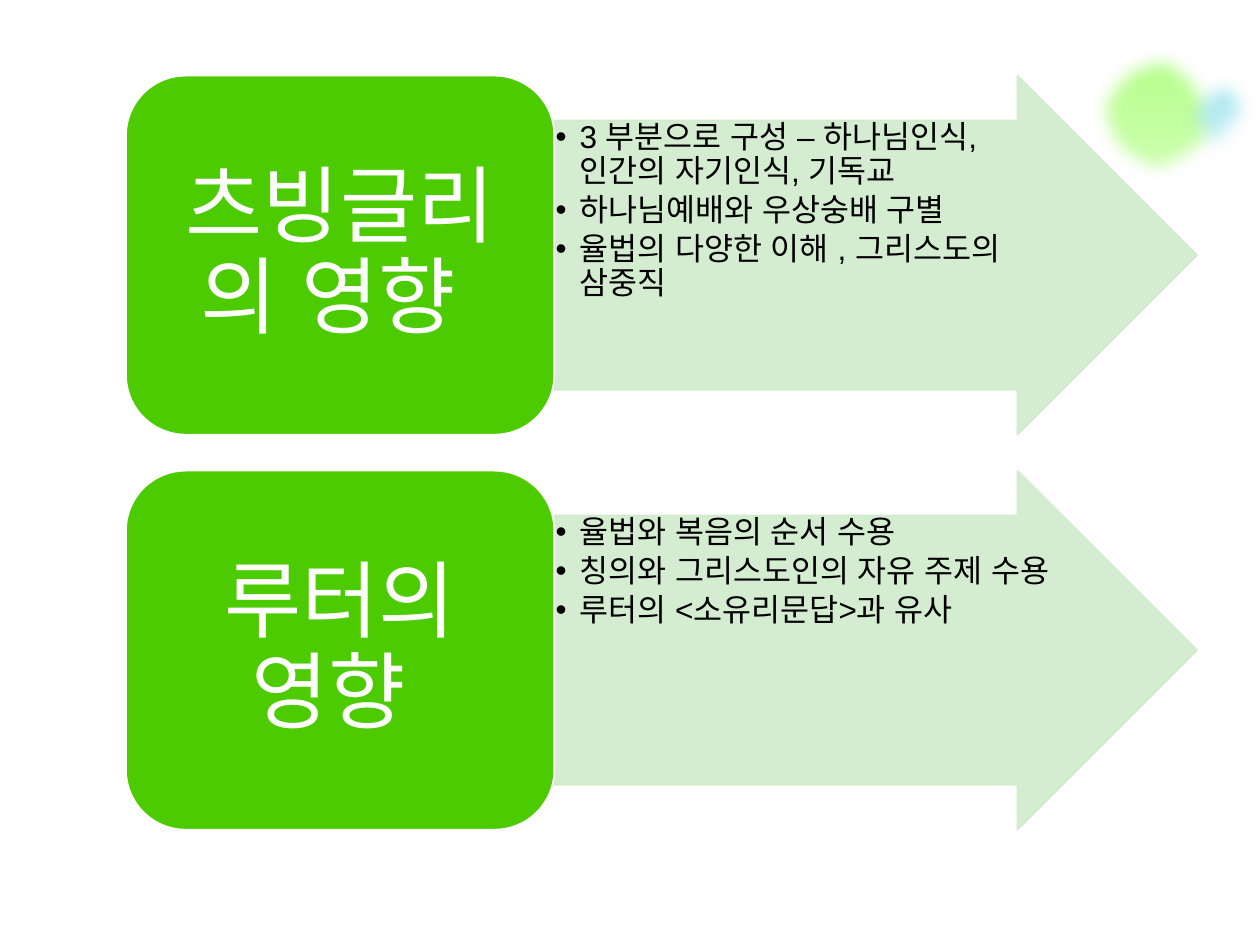
import pptx
import pptx.util
import pptx.dml.color
import pptx.enum.shapes
import pptx.enum.text
import pptx.oxml
import pptx.oxml.ns

SLIDE_WIDTH = pptx.util.Inches(10)
SLIDE_HEIGHT = pptx.util.Inches(7.5)
COLORS = {
    "label": "4CCB00",
    "arrow": "D0ECCC",
    "white": "FFFFFF",
    "black": "000000",
    "green_glow": "B2FF84",
    "blue_glow": "8CDFEC",
    "blue_fade": "B0E9F2",
}
FONT = "Arial"
LEFT, TOP = 0.1, 0.08
LABEL_WIDTH, ARROW_WIDTH, ROW_HEIGHT = 0.34, 0.51, 0.38
ROW_PITCH = ROW_HEIGHT * 1.1

INFLUENCES = [
    ("츠빙글리의 영향 ", [
        "3 부분으로 구성 – 하나님인식, 인간의 자기인식, 기독교",
        "하나님예배와 우상숭배 구별",
        "율법의 다양한 이해 , 그리스도의 삼중직",
    ]),
    ("루터의 영향 ", [
        "율법와 복음의 순서 수용",
        "칭의와 그리스도인의 자유 주제 수용",
        "루터의 <소유리문답>과 유사",
    ]),
]

GREEN_OUTLINE = [
    (9.74, 1.03),
    (9.71, 1.18), (9.74, 1.26), (9.49, 1.39),
    (9.36, 1.47), (9.21, 1.5), (9.06, 1.46),
    (8.91, 1.43), (8.78, 1.34), (8.7, 1.21),
    (8.65, 1.04), (8.59, 0.93), (8.63, 0.78),
    (8.66, 0.63), (8.75, 0.5), (8.88, 0.42),
    (9.06, 0.37), (9.18, 0.32), (9.31, 0.34),
    (9.43, 0.37), (9.55, 0.45), (9.63, 0.58),
    (9.71, 0.71), (9.78, 0.88), (9.74, 1.03),
]
BLUE_OUTLINE = [
    (9.97, 1.05),
    (10.03, 0.96), (10, 0.89), (9.99, 0.82),
    (9.98, 0.75), (9.97, 0.65), (9.91, 0.6),
    (9.85, 0.56), (9.71, 0.54), (9.62, 0.56),
    (9.54, 0.58), (9.45, 0.63), (9.39, 0.72),
    (9.32, 0.81), (9.32, 0.92), (9.34, 1.01),
    (9.35, 1.09), (9.4, 1.19), (9.46, 1.24),
    (9.53, 1.29), (9.64, 1.31), (9.71, 1.31),
    (9.78, 1.3), (9.81, 1.29), (9.87, 1.2),
    (9.87, 1.2), (9.97, 1.05), (9.97, 1.05),
]


def rgb(name):
    return pptx.dml.color.RGBColor.from_string(COLORS[name])


def add_child(parent, tag, **attributes):
    child = pptx.oxml.parse_xml(f"<a:{tag} {pptx.oxml.ns.nsdecls('a')}/>")
    for key, value in attributes.items():
        child.set(key, str(value))
    parent.append(child)
    return child


def set_opacity(element, percent):
    for color in element.iter(pptx.oxml.ns.qn("a:srgbClr")):
        add_child(color, "alpha", val=percent * 1000)


def bend_segments(properties):
    segments = list(properties.iter(pptx.oxml.ns.qn("a:lnTo")))
    for first in range(0, len(segments), 3):
        trio = segments[first:first + 3]
        curve = add_child(trio[0].getparent(), "cubicBezTo")
        trio[0].addprevious(curve)
        for segment in trio:
            curve.append(segment[0])
            segment.getparent().remove(segment)


def add_glow(slide, outline, center, edge, edge_opacity):
    points = [tuple(map(pptx.util.Inches, point)) for point in outline]
    builder = slide.shapes.build_freeform(*points[0])
    builder.add_line_segments(points[1:], close=True)
    glow = builder.convert_to_shape()
    properties = glow.element.spPr
    bend_segments(properties)
    glow.line.fill.background()
    glow.fill.gradient()
    glow.fill.gradient_angle = 270
    stops = glow.fill.gradient_stops
    for stop, color, position in zip(stops, (center, edge), (0, 1)):
        stop.color.rgb = rgb(color)
        stop.position = position
    last_color = list(properties.iter(pptx.oxml.ns.qn("a:srgbClr")))[-1]
    add_child(last_color, "alpha", val=edge_opacity * 1000)
    effects = add_child(properties, "effectLst")
    add_child(effects, "softEdge", rad=pptx.util.Pt(10))


def add_panel(slide, kind, left, top, width, fill, line, adjustments):
    panel = slide.shapes.add_shape(
        kind, int(SLIDE_WIDTH * left), int(SLIDE_HEIGHT * top),
        int(SLIDE_WIDTH * width), int(SLIDE_HEIGHT * ROW_HEIGHT))
    for index, value in enumerate(adjustments):
        panel.adjustments[index] = value
    panel.shadow.inherit = False
    panel.fill.solid()
    panel.fill.fore_color.rgb = rgb(fill)
    panel.line.color.rgb = rgb(line)
    panel.line.width = pptx.util.Pt(1)
    return panel


def set_frame(panel, anchor, side_inset, end_inset):
    frame = panel.text_frame
    frame.word_wrap = True
    frame.vertical_anchor = anchor
    frame.margin_left = frame.margin_right = pptx.util.Inches(side_inset)
    frame.margin_top = frame.margin_bottom = pptx.util.Inches(end_inset)
    return frame


def write(paragraph, text, size, color, alignment, space_share):
    paragraph.alignment = alignment
    paragraph.line_spacing = 0.9
    paragraph.space_after = pptx.util.Pt(size * space_share)
    run = paragraph.add_run()
    run.text = text
    run.font.name = FONT
    run.font.size = pptx.util.Pt(size)
    run.font.color.rgb = rgb(color)
    run.font.language_id = pptx.enum.lang.MSO_LANGUAGE_ID.KOREAN
    for script in ("ea", "cs"):
        add_child(run.font._element, script, typeface=FONT)


def add_points_arrow(slide, top, points):
    arrow = add_panel(slide, pptx.enum.shapes.MSO_SHAPE.RIGHT_ARROW,
                      LEFT + LABEL_WIDTH, top, ARROW_WIDTH, "arrow", "arrow", (0.75, 0.5))
    set_opacity(arrow.element.spPr, 90)
    frame = set_frame(arrow, pptx.enum.text.MSO_ANCHOR.TOP, 0.01, 0.01)
    indent = pptx.util.Inches(0.19)
    for index, point in enumerate(points):
        paragraph = frame.add_paragraph() if index else frame.paragraphs[0]
        paragraph.level = 1
        properties = paragraph._p.get_or_add_pPr()
        properties.set("marL", str(indent))
        properties.set("indent", str(-indent))
        add_child(properties, "buFont", typeface=FONT)
        add_child(properties, "buChar", char="•")
        write(paragraph, point, 18, "black", pptx.enum.text.PP_ALIGN.LEFT, 0.15)


def add_label(slide, top, title):
    label = add_panel(slide, pptx.enum.shapes.MSO_SHAPE.ROUNDED_RECTANGLE,
                      LEFT, top, LABEL_WIDTH, "label", "white", (1 / 6,))
    frame = set_frame(label, pptx.enum.text.MSO_ANCHOR.MIDDLE, 0.2, 0.1)
    write(frame.paragraphs[0], title, 48, "white", pptx.enum.text.PP_ALIGN.CENTER, 0.35)


def main():
    presentation = pptx.Presentation()
    presentation.slide_width = SLIDE_WIDTH
    presentation.slide_height = SLIDE_HEIGHT
    slide = presentation.slides.add_slide(presentation.slide_layouts[6])
    add_glow(slide, GREEN_OUTLINE, "green_glow", "green_glow", 58)
    add_glow(slide, BLUE_OUTLINE, "blue_glow", "blue_fade", 36)
    for row, (title, points) in enumerate(INFLUENCES):
        top = TOP + row * ROW_PITCH
        add_points_arrow(slide, top, points)
        add_label(slide, top, title)
    presentation.save("out.pptx")


if __name__ == "__main__":
    main()
